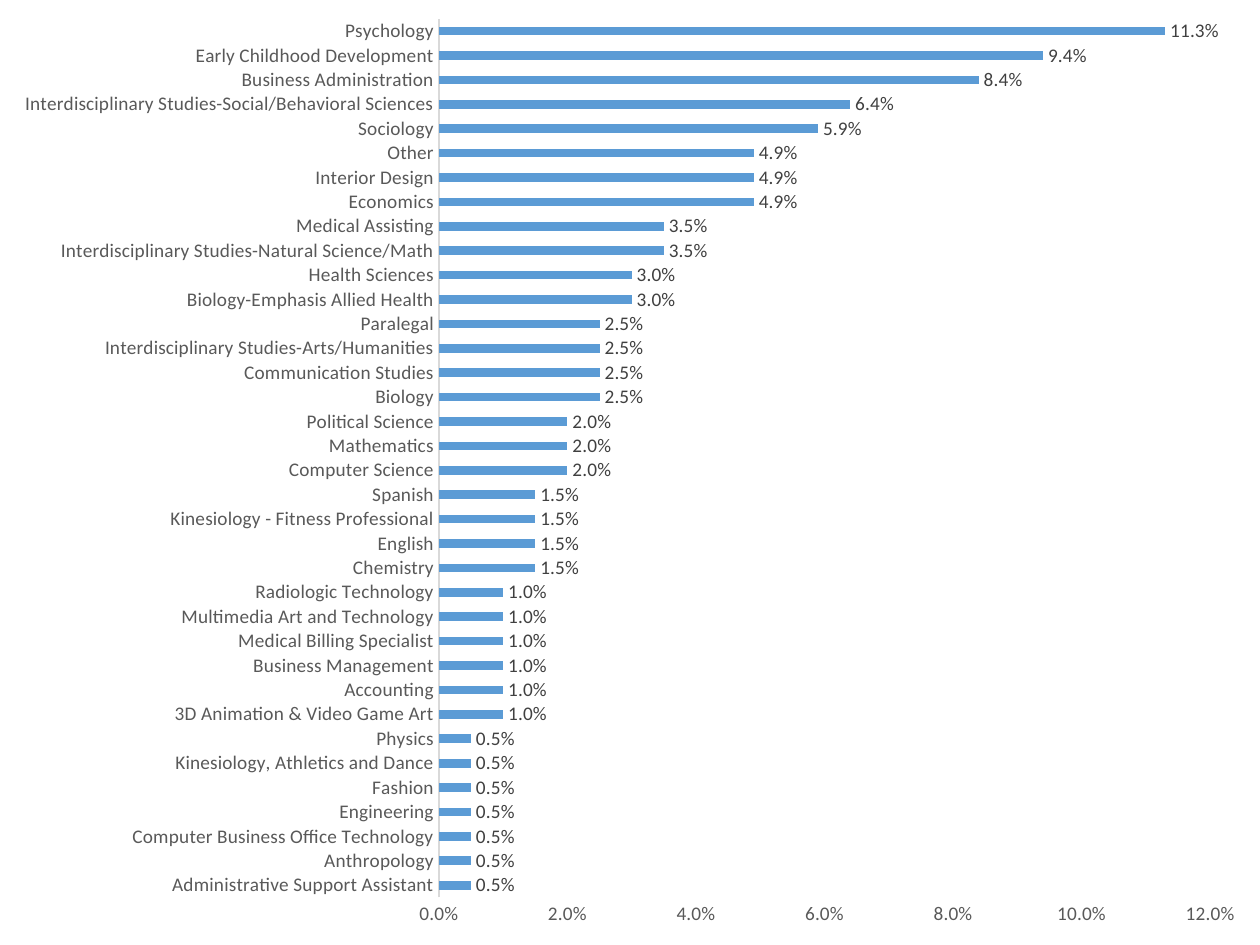
import pptx
import pptx.chart.data
import pptx.dml.color
import pptx.enum.chart
import pptx.util
from pptx.util import Pt

# Majors by share of students, in percent, from the bottom bar to the top one
SHARES = [
    (0.5, ["Administrative Support Assistant", "Anthropology",
           "Computer Business Office Technology", "Engineering", "Fashion",
           "Kinesiology, Athletics and Dance", "Physics"]),
    (1.0, ["3D Animation & Video Game Art", "Accounting", "Business Management",
           "Medical Billing Specialist", "Multimedia Art and Technology",
           "Radiologic Technology"]),
    (1.5, ["Chemistry", "English", "Kinesiology - Fitness Professional", "Spanish"]),
    (2.0, ["Computer Science", "Mathematics", "Political Science"]),
    (2.5, ["Biology", "Communication Studies",
           "Interdisciplinary Studies-Arts/Humanities", "Paralegal"]),
    (3.0, ["Biology-Emphasis Allied Health", "Health Sciences"]),
    (3.5, ["Interdisciplinary Studies-Natural Science/Math", "Medical Assisting"]),
    (4.9, ["Economics", "Interior Design", "Other"]),
    (5.9, ["Sociology"]),
    (6.4, ["Interdisciplinary Studies-Social/Behavioral Sciences"]),
    (8.4, ["Business Administration"]),
    (9.4, ["Early Childhood Development"]),
    (11.3, ["Psychology"]),
]

THEME = {
    "font": "Calibri",
    "size": Pt(11),
    "text": "000000",
    "axis_text": "595959",
    "label_text": "404040",
    "axis_line": "D9D9D9",
    "bar": "5B9BD5",
}
PERCENT = "0.0%"
SLIDE_W, SLIDE_H = Pt(720), Pt(540)


def color(name):
    return pptx.dml.color.RGBColor.from_string(THEME[name])


def style_font(font, color_name):
    font.name = THEME["font"]
    font.size = THEME["size"]
    font.bold = False
    font.color.rgb = color(color_name)


def style_axis(axis):
    """Apply what both axes share: grey labels, no ticks, no gridlines."""
    none = pptx.enum.chart.XL_TICK_MARK.NONE
    axis.major_tick_mark = none
    axis.minor_tick_mark = none
    axis.has_major_gridlines = False
    style_font(axis.tick_labels.font, "axis_text")


def add_majors_chart(s):
    data = pptx.chart.data.CategoryChartData(number_format=PERCENT)
    data.categories = [major for _, majors in SHARES for major in majors]
    data.add_series("Series 1", [round(share / 100, 3)
                                 for share, majors in SHARES for _ in majors])
    chart = s.shapes.add_chart(pptx.enum.chart.XL_CHART_TYPE.BAR_CLUSTERED,
                               0, 0, SLIDE_W, SLIDE_H, data).chart
    chart.has_title = False
    chart.has_legend = False
    style_font(chart.font, "text")

    style_axis(chart.category_axis)
    line = chart.category_axis.format.line
    line.color.rgb = color("axis_line")
    line.width = Pt(0.75)

    axis = chart.value_axis
    style_axis(axis)
    axis.format.line.fill.background()
    axis.minimum_scale, axis.maximum_scale, axis.major_unit = 0, 0.12, 0.02
    axis.tick_labels.number_format = PERCENT
    axis.tick_labels.number_format_is_linked = False

    plot = chart.plots[0]
    plot.gap_width = 182
    plot.vary_by_categories = False
    fill = plot.series[0].format.fill
    fill.solid()
    fill.fore_color.rgb = color("bar")

    labels = plot.series[0].data_labels
    labels.show_value = True
    labels.position = pptx.enum.chart.XL_LABEL_POSITION.OUTSIDE_END
    labels.number_format = PERCENT
    labels.number_format_is_linked = False
    style_font(labels.font, "label_text")


def main():
    prs = pptx.Presentation()
    prs.slide_width, prs.slide_height = SLIDE_W, SLIDE_H
    s = prs.slides.add_slide(prs.slide_layouts.get_by_name("Blank"))
    add_majors_chart(s)
    prs.save("out.pptx")


if __name__ == "__main__":
    main()
